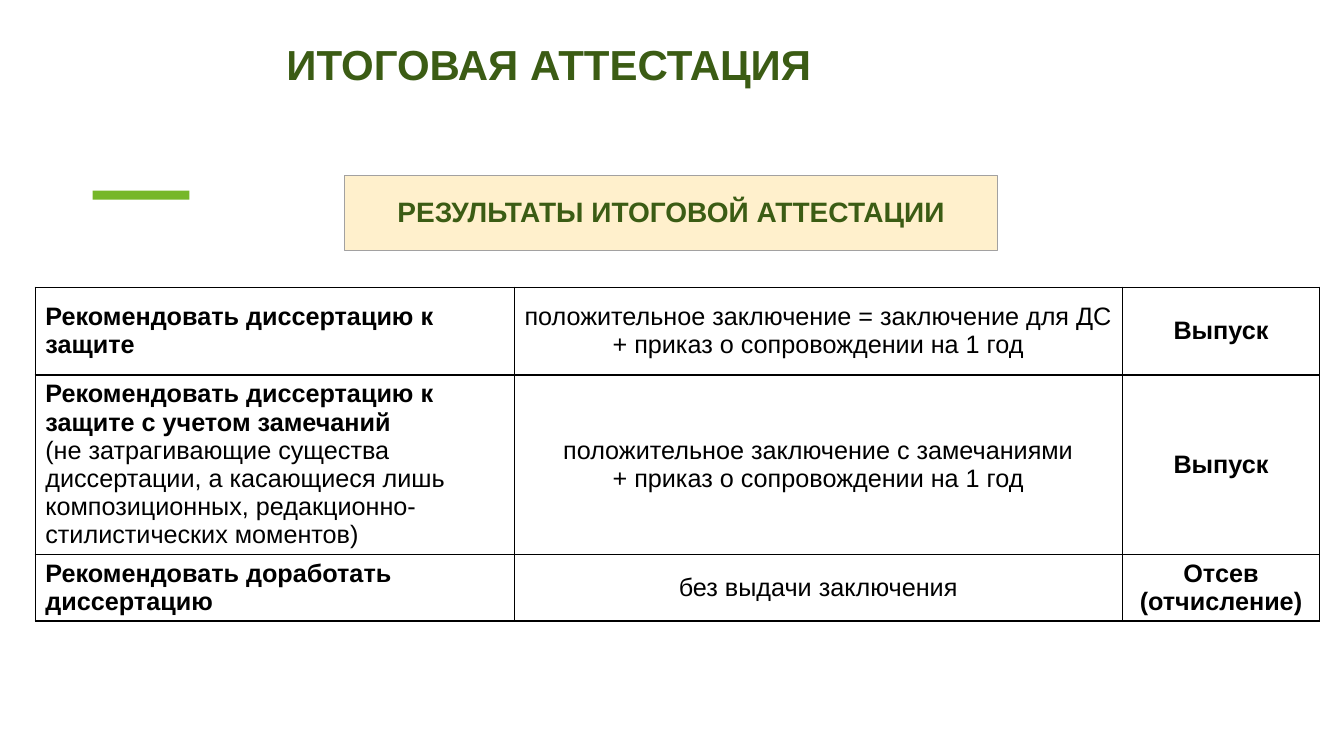
from pptx import Presentation
from pptx.dml.color import RGBColor
from pptx.enum.shapes import MSO_SHAPE as Shape
from pptx.enum.text import MSO_ANCHOR as Anchor, PP_ALIGN as Align
from pptx.oxml import parse_xml
from pptx.oxml.ns import nsdecls
from pptx.util import Inches, Pt

# Content
TITLE = "ИТОГОВАЯ АТТЕСТАЦИЯ"
BANNER = "РЕЗУЛЬТАТЫ ИТОГОВОЙ АТТЕСТАЦИИ"
ORDER = "+ приказ о сопровождении на 1 год"
# Each cell is a list of (text, bold) paragraphs
ROWS = [
    [[("Рекомендовать диссертацию к защите", True)],
     [("положительное заключение = заключение для ДС", False), (ORDER, False)],
     [("Выпуск", True)]],
    [[("Рекомендовать диссертацию к защите с учетом замечаний", True),
      ("(не затрагивающие существа диссертации, а касающиеся лишь "
       "композиционных, редакционно-стилистических моментов)", False)],
     [("положительное заключение с замечаниями", False), (ORDER, False)],
     [("Выпуск", True)]],
    [[("Рекомендовать доработать диссертацию", True)],
     [("без выдачи заключения", False)],
     [("Отсев (отчисление)", True)]],
]
WIDTHS = [4.75, 6.03, 1.96]
HEIGHTS = [0.87, 1.78, 0.66]
ALIGNS = [Align.LEFT, Align.CENTER, Align.CENTER]
COLORS = {"accent": "76B729", "head": "3B5C14", "cream": "FFF0CC",
          "edge": "A2A1A1", "text": "000000"}


def color(name):
    return RGBColor.from_string(COLORS[name])


def write(frame, lines, size, tone, align, spacing=None):
    frame.word_wrap = True
    for i, (text, bold) in enumerate(lines):
        para = frame.paragraphs[0] if i == 0 else frame.add_paragraph()
        para.alignment = align
        if spacing:
            para.line_spacing = spacing
        run = para.add_run()
        run.text = text
        font = run.font
        font.name, font.size, font.bold = "Arial", Pt(size), bold
        font.color.rgb = color(tone)


def add_box(slide, place, fill, edge=None):
    box = slide.shapes.add_shape(Shape.RECTANGLE, *map(Inches, place))
    box.shadow.inherit = False
    box.fill.solid()
    box.fill.fore_color.rgb = color(fill)
    if edge:
        box.line.color.rgb = color(edge)
        box.line.width = Pt(0.75)
    else:
        box.line.fill.background()
    return box


def add_edges(cell):
    props = cell._tc.get_or_add_tcPr()
    for i, side in enumerate(("lnL", "lnR", "lnT", "lnB")):
        props.insert(i, parse_xml(
            f'<a:{side} {nsdecls("a")} w="{Pt(1)}"><a:solidFill>'
            f'<a:srgbClr val="{COLORS["text"]}"/></a:solidFill></a:{side}>'))


deck = Presentation()
deck.slide_width, deck.slide_height = Inches(13.33), Inches(7.5)
slide = deck.slides.add_slide(deck.slide_layouts[5])

# Title and accent bar
title = slide.shapes.title
title.left, title.top, title.width, title.height = map(
    Inches, (2.74, 0.21, 5.48, 0.9))
title.text_frame.vertical_anchor = Anchor.MIDDLE
write(title.text_frame, [(TITLE, True)], 30, "head", Align.LEFT, 0.9)
add_box(slide, (0.92, 1.89, 0.96, 0.09), "accent")

# Banner
banner = add_box(slide, (3.42, 1.74, 6.47, 0.75), "cream", "edge")
banner.text_frame.vertical_anchor = Anchor.MIDDLE
write(banner.text_frame, [(BANNER, True)], 20, "head", Align.CENTER, 0.9)

# Table of outcomes
table = slide.shapes.add_table(
    len(ROWS), len(WIDTHS), Inches(0.35), Inches(2.85),
    Inches(sum(WIDTHS)), Inches(sum(HEIGHTS))).table
table.first_row = table.horz_banding = False
for col, width in zip(table.columns, WIDTHS):
    col.width = Inches(width)
for r, (row, height) in enumerate(zip(ROWS, HEIGHTS)):
    table.rows[r].height = Inches(height)
    for c, lines in enumerate(row):
        cell = table.cell(r, c)
        cell.vertical_anchor = Anchor.MIDDLE
        cell.fill.background()
        add_edges(cell)
        write(cell.text_frame, lines, 18, "text", ALIGNS[c])

deck.save("out.pptx")
